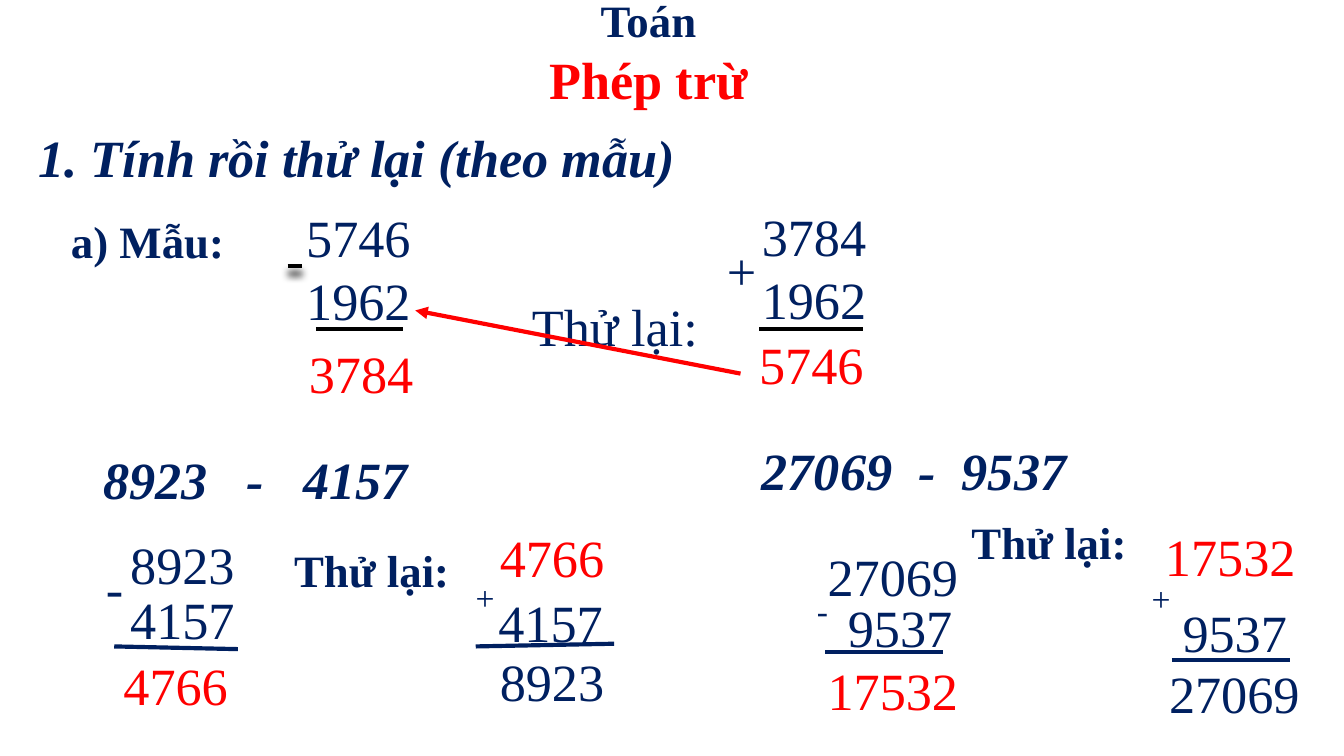
from dataclasses import dataclass

from lxml import etree
from pptx import Presentation
from pptx.dml.color import RGBColor
from pptx.enum import shapes, text
from pptx.oxml import ns
from pptx.util import Inches, Pt


@dataclass(frozen=True)
class Theme:
    font: str = "Times New Roman"
    navy: str = "002060"
    red: str = "FF0000"
    black: str = "000000"
    large: int = 28
    medium: int = 24
    small: int = 18
    line: float = 2.25


THEME = Theme()
HEIGHTS = {THEME.large: 0.57, THEME.medium: 0.5, THEME.small: 0.4}


class MathSlide:
    def __init__(self, slide, theme):
        self.slide = slide
        self.theme = theme

    def format_run(self, run, size, color, bold=False, italic=False):
        font = run.font
        font.name = self.theme.font
        font.size = Pt(size)
        font.bold = bold
        font.italic = italic
        font.color.rgb = RGBColor.from_string(color)

    def text_box(self, left, top, width, height, wrap=False):
        box = self.slide.shapes.add_textbox(
            Inches(left), Inches(top), Inches(width), Inches(height))
        frame = box.text_frame
        frame.word_wrap = wrap
        frame.auto_size = text.MSO_AUTO_SIZE.SHAPE_TO_FIT_TEXT
        return frame

    def label(self, content, left, top, width, size, color=None, **style):
        frame = self.text_box(left, top, width, HEIGHTS[size])
        frame.text = content
        self.format_run(frame.paragraphs[0].runs[0], size, color or self.theme.navy, **style)
        return frame

    def number(self, digits, left, top, color=None):
        width = 0.98 if len(digits) == 4 else 1.17
        self.label(digits, left, top, width, self.theme.large, color)

    def stacked_numbers(self, numbers, left, top, width):
        frame = self.text_box(left, top, width, 1.04)
        frame.text = "\n".join(numbers)
        for paragraph in frame.paragraphs:
            self.format_run(paragraph.runs[0], self.theme.large, self.theme.navy)

    def expression(self, parts, left, top, width, gap, wrap=False):
        """Write the parts on one line, each space widened by gap points."""
        frame = self.text_box(left, top, width, HEIGHTS[self.theme.large], wrap)
        paragraph = frame.paragraphs[0]
        for index, part in enumerate(parts):
            for content in ([" "] if index else []) + [part]:
                run = paragraph.add_run()
                run.text = content
                self.format_run(run, self.theme.large, self.theme.navy, bold=True, italic=True)
                if content == " ":
                    run.font._element.set("spc", str(gap * 100))

    def heading(self, lines, left, top, width, height):
        frame = self.text_box(left, top, width, height, wrap=True)
        frame.text = "\n".join(content for content, _, _ in lines)
        for paragraph, (_, size, color) in zip(frame.paragraphs, lines):
            paragraph.alignment = text.PP_ALIGN.CENTER
            self.format_run(paragraph.runs[0], size, color, bold=True)

    def line(self, start, end, color=None, arrow=False, shadow=False):
        connector = self.slide.shapes.add_connector(
            shapes.MSO_CONNECTOR.STRAIGHT, *(Inches(value) for value in start + end))
        connector.line.color.rgb = RGBColor.from_string(color or self.theme.navy)
        connector.line.width = Pt(self.theme.line)
        properties = connector._element.spPr
        if arrow:
            outline = properties.find(ns.qn("a:ln"))
            etree.SubElement(outline, ns.qn("a:tailEnd"), type="triangle")
        effects = etree.SubElement(properties, ns.qn("a:effectLst"))
        if shadow:
            outer = etree.SubElement(
                effects, ns.qn("a:outerShdw"), blurRad=str(Pt(4)), dist=str(Pt(4)),
                dir="5400000", rotWithShape="0")
            fill = etree.SubElement(outer, ns.qn("a:srgbClr"), val=self.theme.black)
            etree.SubElement(fill, ns.qn("a:alpha"), val="95000")


def add_example(page, theme):
    page.label("1. Tính rồi thử lại (theo mẫu)", 0.19, 0.88, 5.04, theme.large,
               bold=True, italic=True).paragraphs[0].alignment = text.PP_ALIGN.JUSTIFY
    page.label("a) Mẫu:", 0.43, 1.54, 1.34, theme.medium, bold=True)
    page.label("Thử lại:", 3.86, 2.14, 1.44, theme.large)
    page.number("5746", 5.55, 2.42, theme.red)
    page.number("3784", 2.2, 2.49, theme.red)
    page.line((2.35, 2.45), (3, 2.45), theme.black)
    page.stacked_numbers(["5746", "1962"], 2.18, 1.48, 0.98)
    page.line((2.14, 1.98), (2.25, 1.98), theme.black, shadow=True)
    page.line((5.65, 2.45), (6.42, 2.45), theme.black)
    page.stacked_numbers(["3784", "1962"], 5.57, 1.47, 1.07)
    page.label("+", 5.31, 1.72, 0.42, theme.large)
    page.line((5.51, 2.78), (3.09, 2.31), theme.red, arrow=True)


def add_exercises(page, theme):
    page.expression(["8923", "-", "4157"], 0.67, 3.28, 3.08, gap=14, wrap=True)
    page.expression(["27069", "-", "9537"], 5.57, 3.21, 2.66, gap=7)

    navy, red = theme.navy, theme.red
    # Each calculation: three numbers, the operator, and the rule above the result.
    calculations = [
        ([("8923", 0.87, 3.91, navy), ("4157", 0.87, 4.32, navy), ("4766", 0.82, 4.81, red)],
         ("-", 0.69, 4.08, 0.33, theme.large), ((0.85, 4.81), (1.77, 4.83))),
        ([("4766", 3.62, 3.86, red), ("4157", 3.61, 4.34, navy), ("8923", 3.62, 4.78, navy)],
         ("+", 3.44, 4.24, 0.34, theme.small), ((3.54, 4.81), (4.57, 4.79))),
        ([("27069", 6.06, 4, navy), ("9537", 6.21, 4.38, navy), ("17532", 6.06, 4.85, red)],
         ("-", 5.98, 4.34, 0.34, theme.small), ((6.14, 4.85), (7.02, 4.85))),
        ([("17532", 8.57, 3.85, red), ("9537", 8.7, 4.42, navy), ("27069", 8.6, 4.87, navy)],
         ("+", 8.47, 4.25, 0.34, theme.small), ((8.72, 4.91), (9.6, 4.91))),
    ]
    for numbers, operator, rule in calculations:
        for number in numbers:
            page.number(*number)
        page.label(*operator)
        page.line(*rule)

    for left, top in ((2.09, 3.99), (7.13, 3.78)):
        page.label("Thử lại:", left, top, 1.37, theme.medium, bold=True)


def main():
    presentation = Presentation()
    presentation.slide_width = Inches(10)
    presentation.slide_height = presentation.slide_width * 9 // 16
    slide = presentation.slides.add_slide(presentation.slide_layouts[6])
    page = MathSlide(slide, THEME)
    add_example(page, THEME)
    add_exercises(page, THEME)
    page.heading([("Toán", THEME.medium, THEME.navy), ("Phép trừ", THEME.large, THEME.red)],
                 2.52, -0.1, 4.61, 0.97)
    presentation.save("out.pptx")


if __name__ == "__main__":
    main()
